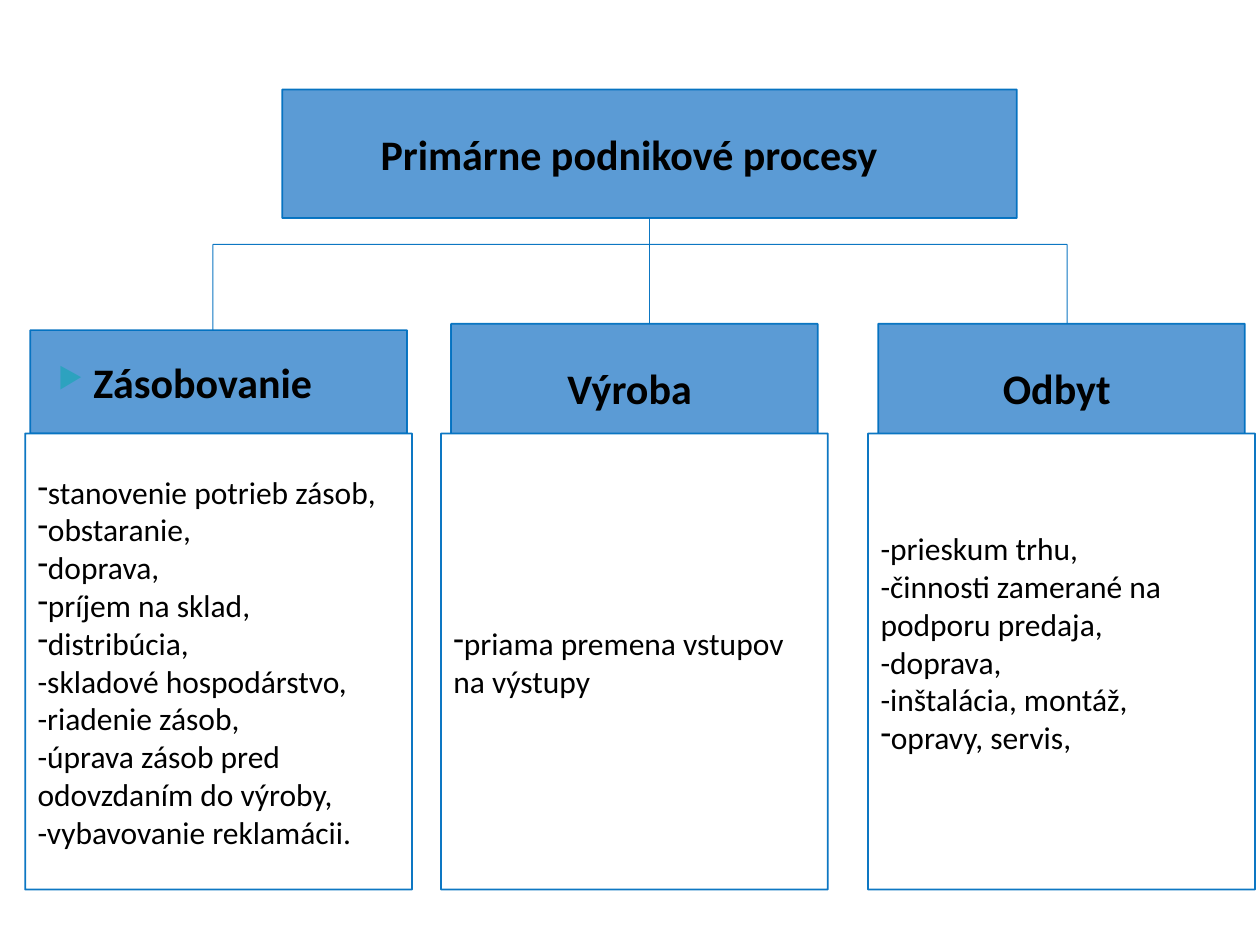
import pptx
import pptx.dml.color
import pptx.enum.shapes
import pptx.enum.text
import pptx.oxml.ns
import pptx.util
from lxml import etree

Inches = pptx.util.Inches
ALIGN = pptx.enum.text.PP_ALIGN
BLUE, EDGE, WHITE, BLACK, TEAL = "5B9BD5", "0070C0", "FFFFFF", "000000", "2DA2BF"
BUS_TOP = 1.94
HEADER_TOP = 2.57
LIST_TOP = 3.44

# Items that start with "•" get a real dash bullet; the others have a typed dash.
SUPPLY = [
    "•stanovenie potrieb zásob,", "•obstaranie,", "•doprava,",
    "•príjem na sklad,", "•distribúcia,", "-skladové hospodárstvo,",
    "-riadenie zásob,", "-úprava zásob pred odovzdaním do výroby,",
    "-vybavovanie reklamácii.",
]
PRODUCTION = ["•priama premena vstupov na výstupy"]
SALES = [
    "-prieskum trhu,", "-činnosti zamerané na podporu predaja,",
    "-doprava,", "-inštalácia, montáž,", "•opravy, servis,",
]


def color(value):
    return pptx.dml.color.RGBColor.from_string(value)


def add_element(parent, tag, **attributes):
    return etree.SubElement(parent, pptx.oxml.ns.qn(tag), **attributes)


def style_line(item, width):
    item.line.color.rgb = color(EDGE)
    item.line.width = pptx.util.Pt(width)
    for rgb in item._element.xpath("./p:spPr/a:ln/a:solidFill/a:srgbClr"):
        add_element(rgb, "a:alpha", val="94000")


def style_box(box, fill):
    box.shadow.inherit = False
    box.fill.solid()
    box.fill.fore_color.rgb = color(fill)
    style_line(box, 1)
    frame = box.text_frame
    frame.word_wrap = True
    frame.auto_size = pptx.enum.text.MSO_AUTO_SIZE.NONE
    frame.vertical_anchor = pptx.enum.text.MSO_ANCHOR.MIDDLE


def set_bullet(para, char, bullet_color=None, percent=100):
    properties = para._p.get_or_add_pPr()
    if bullet_color:
        add_element(add_element(properties, "a:buClr"), "a:srgbClr", val=bullet_color)
    add_element(properties, "a:buSzPct", val=str(percent * 1000))
    add_element(properties, "a:buFontTx")
    add_element(properties, "a:buChar", char=char)


def set_indent(para, left, first=0.0):
    properties = para._p.get_or_add_pPr()
    properties.set("marL", str(Inches(left)))
    properties.set("indent", str(Inches(first)))


def write(para, text, size=18, bold=False, align=ALIGN.LEFT):
    para.alignment = align
    para.space_before = pptx.util.Pt(0)
    span = para.add_run()
    span.text = text
    span.font.name = "Calibri"
    span.font.size = pptx.util.Pt(size)
    span.font.bold = bold
    span.font.color.rgb = color(BLACK)


def place(box, left, top, width, height):
    box.left, box.top = Inches(left), Inches(top)
    box.width, box.height = Inches(width), Inches(height)


def add_box(page, left, top, width, height, fill):
    box = page.shapes.add_shape(
        pptx.enum.shapes.MSO_SHAPE.RECTANGLE,
        Inches(left), Inches(top), Inches(width), Inches(height))
    style_box(box, fill)
    return box


def add_header(page, left, text):
    box = add_box(page, left, HEADER_TOP, 2.91, 1.02, BLUE)
    write(box.text_frame.paragraphs[0], text, size=24, bold=True, align=ALIGN.CENTER)


def add_list(page, left, items, bottom_margin=0.05):
    box = add_box(page, left, LIST_TOP, 3.07, 3.62, WHITE)
    frame = box.text_frame
    frame.margin_bottom = Inches(bottom_margin)
    for index, item in enumerate(items):
        para = frame.add_paragraph() if index else frame.paragraphs[0]
        if item.startswith("•"):
            set_indent(para, 0)
            set_bullet(para, "-")
        write(para, item.removeprefix("•"))


def add_line(page, left, top, right, bottom):
    line = page.shapes.add_connector(
        pptx.enum.shapes.MSO_CONNECTOR.STRAIGHT,
        Inches(left), Inches(top), Inches(right), Inches(bottom))
    style_line(line, 0.5)
    add_element(line._element.spPr, "a:effectLst")
    return line


def main():
    deck = pptx.Presentation()
    deck.slide_width, deck.slide_height = Inches(10), Inches(7.5)
    page = deck.slides.add_slide(deck.slide_layouts[1])

    # Top box
    title = page.shapes.title
    place(title, 2.24, 0.71, 5.83, 1.02)
    style_box(title, BLUE)
    title_para = title.text_frame.paragraphs[0]
    set_indent(title_para, 0.68)
    write(title_para, "Primárne podnikové procesy", size=24, bold=True)

    # Column headers
    supply = page.placeholders[1]
    place(supply, 0.24, 2.62, 2.99, 0.82)
    style_box(supply, BLUE)
    supply_para = supply.text_frame.paragraphs[0]
    set_indent(supply_para, 0.4, -0.28)
    set_bullet(supply_para, "▶", TEAL, 68)
    write(supply_para, "Zásobovanie", size=24, bold=True)
    add_header(page, 3.58, "Výroba ")
    add_header(page, 6.97, "Odbyt ")

    # Column lists
    add_list(page, 0.2, SUPPLY)
    add_list(page, 3.5, PRODUCTION)
    add_list(page, 6.89, SALES, bottom_margin=0.35)

    # Connecting lines
    trunk_x = 2.24 + 5.83 / 2
    add_line(page, 1.69, BUS_TOP, 8.47, BUS_TOP)
    for x, bottom in ((1.69, 2.62), (trunk_x, HEADER_TOP), (8.47, HEADER_TOP)):
        add_line(page, x, BUS_TOP, x, bottom)
    trunk = add_line(page, trunk_x, 1.73, trunk_x, 1.97)
    trunk.begin_connect(title, 2)

    deck.save("out.pptx")


if __name__ == "__main__":
    main()
